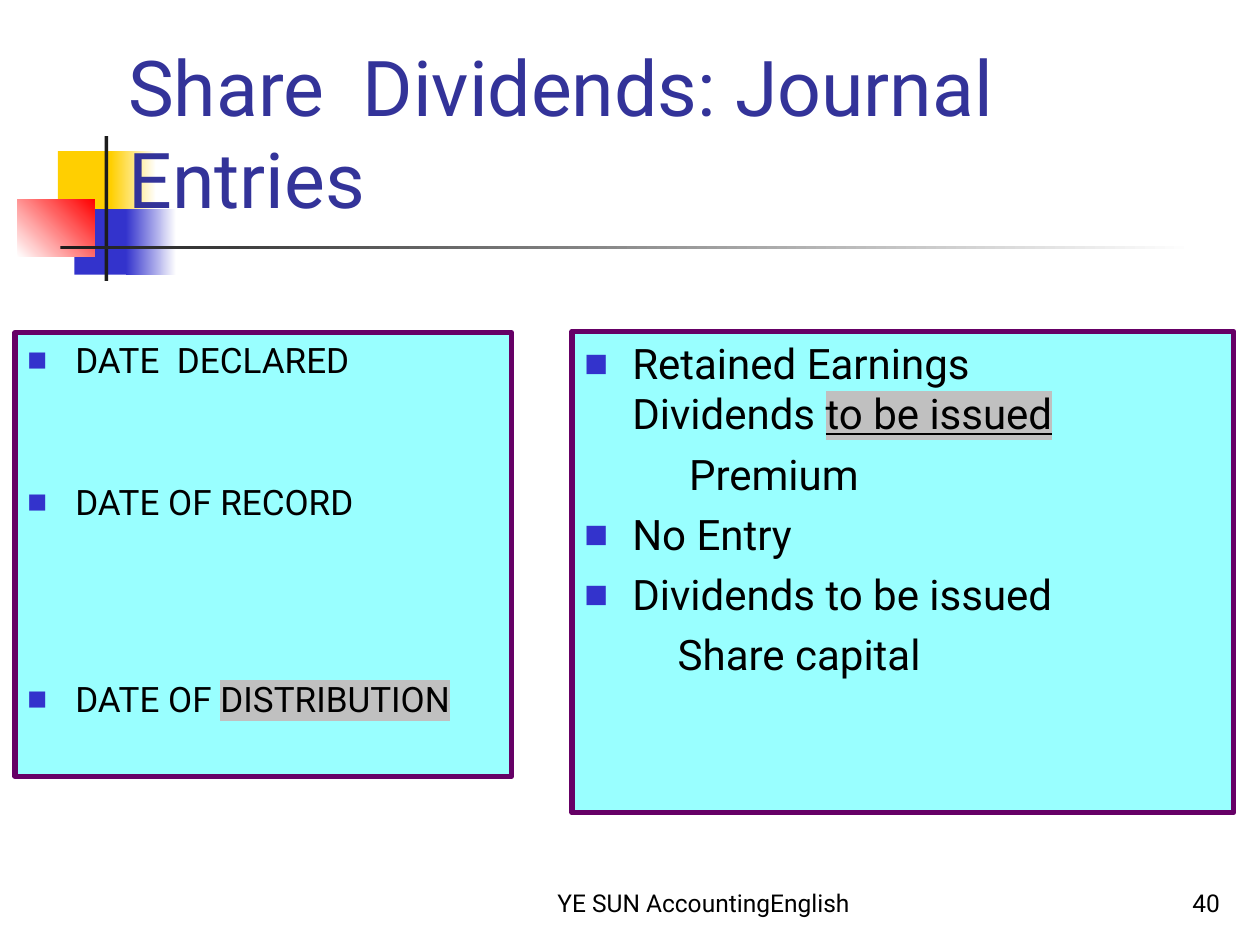
import pptx
import pptx.util
import pptx.dml.color
import pptx.enum.shapes
import pptx.enum.text
import pptx.oxml
import pptx.oxml.ns

Inches, Pt = pptx.util.Inches, pptx.util.Pt
ALIGN, ANCHOR = pptx.enum.text.PP_ALIGN, pptx.enum.text.MSO_ANCHOR

THEME = {
    "font": "Roboto",
    "title": "333399", "text": "000000", "bullet": "3333CC", "mark": "C0C0C0",
    "panel": "99FFFF", "border": "660066",
    "yellow": "FFCF01", "blue": "3333CC", "red": "FF0000",
    "dark": "1C1C1C", "white": "FFFFFF",
    "title_size": 44, "entry_size": 24, "date_size": 20, "footer_size": 14,
}

ORNAMENTS = [
    ((0.46, 1.2, 0.48, 0.52), ("yellow",), 0),
    ((0.88, 1.2, 0.36, 0.52), ("yellow", "white"), 0),
    ((0.59, 1.66, 0.46, 0.52), ("blue",), 0),
    ((1, 1.66, 0.4, 0.52), ("blue", "white"), 0),
    ((0.14, 1.58, 0.61, 0.46), ("white", "red"), 45),
    ((0.83, 1.08, 0.03, 1.15), ("dark",), 0),
    ((0.48, 1.95, 9, 0.03), ("dark", "white"), 0),
]

LABELS = [
    ((4, 6.83, 3.17, 0.5), "YE SUN AccountingEnglish", "footer_size", "text", ALIGN.CENTER, ANCHOR.BOTTOM),
    ((7.7, 6.83, 2.08, 0.5), "40", "footer_size", "text", ALIGN.RIGHT, ANCHOR.BOTTOM),
    ((0.92, 0.34, 8.49, 1.41), "Share  Dividends: Journal Entries", "title_size", "title", ALIGN.LEFT, ANCHOR.MIDDLE),
]

HANG = 0.38
PANELS = [
    ((0.12, 2.64, 3.94, 3.52), "date_size", [
        {"text": "DATE  DECLARED", "before": 0},
        {"text": "DATE OF RECORD", "before": 57},
        {"text": "DATE OF ", "marked": "DISTRIBUTION", "before": 88.6},
    ]),
    ((4.54, 2.63, 5.25, 3.82), "entry_size", [
        {"text": "Retained Earnings\vDividends ", "marked": "to be issued", "underline": True, "before": 0},
        {"text": "Premium", "indent": 0.83, "before": 5.6},
        {"text": "No Entry", "before": 5.6},
        {"text": "Dividends to be issued", "before": 5.6},
        {"text": "Share capital", "indent": 0.74, "before": 5.6},
    ]),
]


def color(name):
    return pptx.dml.color.RGBColor.from_string(THEME[name])


def add_xml(parent, tag, **attrs):
    return pptx.oxml.ns.qn(tag) and parent.makeelement(pptx.oxml.ns.qn(tag), attrs)


def add_rect(s, box, colors, angle=0):
    sp = s.shapes.add_shape(pptx.enum.shapes.MSO_SHAPE.RECTANGLE, *map(Inches, box))
    sp.shadow.inherit = False
    sp.line.fill.background()
    if len(colors) == 1:
        sp.fill.solid()
        sp.fill.fore_color.rgb = color(colors[0])
    else:
        sp.fill.gradient()
        sp.fill.gradient_angle = angle
        for stop, name in zip(sp.fill.gradient_stops, colors):
            stop.color.rgb = color(name)
    return sp


def style_runs(p, size, name):
    for r in p.runs:
        r.font.name = THEME["font"]
        r.font.size = Pt(THEME[size])
        r.font.color.rgb = color(name)


def highlight(r):
    fill = r._r.get_or_add_rPr().find(pptx.oxml.ns.qn("a:solidFill"))
    mark = make(fill, "a:highlight")
    mark.append(make(fill, "a:srgbClr", val=THEME["mark"]))
    fill.addnext(mark)


def make(near, tag, **attrs):
    return near.makeelement(pptx.oxml.ns.qn(tag), attrs)


def indent(p, left, first):
    pPr = p._p.get_or_add_pPr()
    pPr.set("marL", str(Inches(left)))
    pPr.set("indent", str(Inches(first)))
    return pPr


def add_bullet(p):
    pPr = indent(p, HANG, -HANG)
    tint = make(pPr, "a:buClr")
    tint.append(make(pPr, "a:srgbClr", val=THEME["bullet"]))
    pPr.extend([
        tint,
        make(pPr, "a:buSzPct", val="60000"),
        make(pPr, "a:buFont", typeface=THEME["font"]),
        make(pPr, "a:buChar", char="■"),
    ])


def add_label(s, box, text, size, name, align, anchor):
    tf = s.shapes.add_textbox(*map(Inches, box)).text_frame
    tf.word_wrap = True
    tf.vertical_anchor = anchor
    tf.text = text
    p = tf.paragraphs[0]
    p.alignment = align
    style_runs(p, size, name)


def add_panel(s, box, size, items):
    sp = add_rect(s, box, ("panel",))
    sp.line.color.rgb = color("border")
    sp.line.width = Pt(3)
    tf = sp.text_frame
    tf.word_wrap = True
    tf.vertical_anchor = ANCHOR.TOP
    for i, item in enumerate(items):
        p = tf.add_paragraph() if i else tf.paragraphs[0]
        p.text = item["text"]
        p.alignment = ALIGN.LEFT
        p.space_before = Pt(item["before"])
        if "indent" in item:
            indent(p, item["indent"], 0)
        else:
            add_bullet(p)
        if "marked" in item:
            p.add_run().text = item["marked"]
        style_runs(p, size, "text")
        if "marked" in item:
            r = p.runs[-1]
            r.font.underline = item.get("underline")
            highlight(r)


def main():
    prs = pptx.Presentation()
    prs.slide_width, prs.slide_height = Inches(10), Inches(7.5)
    s = prs.slides.add_slide(prs.slide_layouts[6])
    for ornament in ORNAMENTS:
        add_rect(s, *ornament)
    for panel in PANELS:
        add_panel(s, *panel)
    for label in LABELS:
        add_label(s, *label)
    prs.save("out.pptx")


if __name__ == "__main__":
    main()
